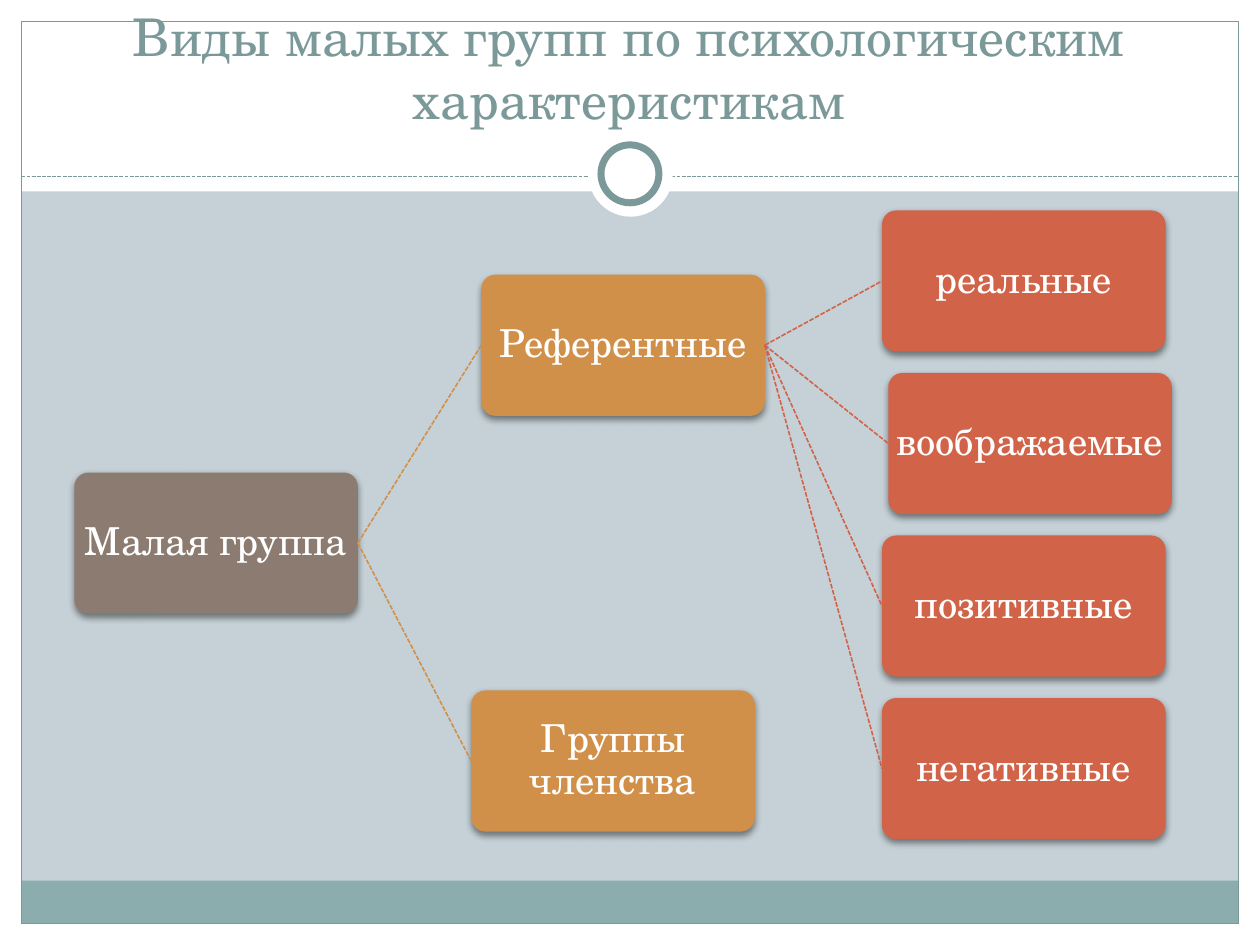
from dataclasses import dataclass

from lxml.etree import SubElement as Sub
from pptx import Presentation
from pptx.dml.color import RGBColor
from pptx.enum.dml import MSO_LINE as Dash
from pptx.enum.shapes import MSO_CONNECTOR as Conn, MSO_SHAPE as Geo
from pptx.enum.text import MSO_ANCHOR as Anchor, MSO_AUTO_SIZE as Fit, PP_ALIGN as Align
from pptx.oxml.ns import qn
from pptx.util import Inches, Pt


@dataclass(frozen=True)
class Theme:
    back: str = "C5D1D7"
    white: str = "FFFFFF"
    teal: str = "7C999A"
    foot: str = "8CADAE"
    root: str = "8C7B70"
    kind: str = "D19049"
    leaf: str = "D16349"
    font: str = "TeX Gyre Schola"
    head: float = 29.7
    body: float = 22


@dataclass(frozen=True)
class Node:
    text: str
    left: float
    top: float
    fill: str
    kids: tuple = ()


THEME = Theme()
BOX_W, BOX_H = 2.25, 1.12
LEFT, RIGHT, EDGE = 0.17, 9.83, 0.17


def paint(shape, fill: str | None, line: str | None = None, width: float = 0.75) -> None:
    shape.shadow.inherit = False
    if fill:
        shape.fill.solid()
        shape.fill.fore_color.rgb = RGBColor.from_string(fill)
    else:
        shape.fill.background()
    if line:
        shape.line.color.rgb = RGBColor.from_string(line)
        shape.line.width = Pt(width)
    else:
        shape.line.fill.background()


def add_part(slide, geo, spot: tuple, fill: str | None, line: str | None = None,
             width: float = 0.75):
    shape = slide.shapes.add_shape(geo, *map(Inches, spot))
    paint(shape, fill, line, width)
    return shape


def add_line(slide, start: tuple, end: tuple, color: str, width: float):
    line = slide.shapes.add_connector(Conn.STRAIGHT, *map(Inches, start + end))
    line.line.color.rgb = RGBColor.from_string(color)
    line.line.width = Pt(width)
    line.line.dash_style = Dash.SQUARE_DOT
    Sub(line.element.spPr, qn("a:effectLst"))
    return line


def add_text(frame, text: str, size: float, color: str) -> None:
    frame.word_wrap = True
    frame.auto_size = Fit.NONE
    para = frame.paragraphs[0]
    para.alignment = Align.CENTER
    run = para.add_run()
    run.text = text
    run.font.name = THEME.font
    run.font.size = Pt(size)
    run.font.color.rgb = RGBColor.from_string(color)


def add_shade(shape) -> None:
    effects = shape.element.spPr.find(qn("a:effectLst"))
    shade = Sub(effects, qn("a:outerShdw"), blurRad=str(Pt(4)), dist=str(Pt(2)),
                dir="5400000", rotWithShape="0")
    color = Sub(shade, qn("a:srgbClr"), val="000000")
    Sub(color, qn("a:alpha"), val="45000")


def add_node(slide, node: Node):
    box = add_part(slide, Geo.ROUNDED_RECTANGLE, (node.left, node.top, BOX_W, BOX_H), node.fill)
    box.adjustments[0] = 0.1
    add_shade(box)
    frame = box.text_frame
    # Small insets: the rounded corners already narrow the text area
    frame.margin_left = frame.margin_right = Inches(0.02)
    frame.margin_top = frame.margin_bottom = Inches(0.02)
    frame.vertical_anchor = Anchor.MIDDLE
    add_text(frame, node.text, THEME.body, THEME.white)
    frame.paragraphs[0].line_spacing = 0.9
    # Each child hangs on a dashed line in its own colour
    for kid in node.kids:
        child = add_node(slide, kid)
        line = add_line(slide, (0, 0), (1, 1), kid.fill, 0.9)
        line.begin_connect(box, 3)
        line.end_connect(child, 1)
    return box


def add_frame(slide) -> None:
    # White margins and header band
    for spot in ((0, 7.33, 10, EDGE), (0, 0, 10, 1.52),
                 (0, 0, EDGE, 7.5), (RIGHT, 0, EDGE, 7.5)):
        add_part(slide, Geo.RECTANGLE, spot, THEME.white)
    # Footer band, border and header rule
    wide = RIGHT - LEFT
    add_part(slide, Geo.RECTANGLE, (LEFT, 6.99, wide, 0.34), THEME.foot)
    add_part(slide, Geo.RECTANGLE, (LEFT, EDGE, wide, 7.16), None, THEME.teal)
    add_line(slide, (LEFT, 1.4), (RIGHT, 1.4), THEME.teal, 0.75)
    # Ring on the rule
    add_part(slide, Geo.OVAL, (4.67, 1.05, 0.67, 0.67), THEME.white)
    add_part(slide, Geo.OVAL, (4.77, 1.15, 0.46, 0.46), THEME.white, THEME.teal, 4)


def add_title(slide, text: str) -> None:
    title = slide.shapes.title
    title.left, title.top, title.width, title.height = map(Inches, (0.33, 0.25, 9.33, 0.83))
    title.text_frame.vertical_anchor = Anchor.BOTTOM
    add_text(title.text_frame, text, THEME.head, THEME.teal)
    slide.shapes.element.append(title.element)  # bring above the header band


def main() -> None:
    deck = Presentation()
    deck.slide_width, deck.slide_height = Inches(10), Inches(7.5)
    slide = deck.slides.add_slide(deck.slide_layouts[5])
    slide.background.fill.solid()
    slide.background.fill.fore_color.rgb = RGBColor.from_string(THEME.back)

    add_frame(slide)
    add_title(slide, "Виды малых групп по психологическим характеристикам")

    # Tree of groups
    names = (("реальные", 7), ("воображаемые", 7.05), ("позитивные", 7), ("негативные", 7))
    leaves = tuple(Node(name, left, 1.67 + 1.29 * i, THEME.leaf)
                   for i, (name, left) in enumerate(names))
    kinds = (Node("Референтные", 3.82, 2.18, THEME.kind, leaves),
             Node("Группы членства", 3.74, 5.48, THEME.kind))
    add_node(slide, Node("Малая группа", 0.59, 3.75, THEME.root, kinds))

    deck.save("out.pptx")


if __name__ == "__main__":
    main()
